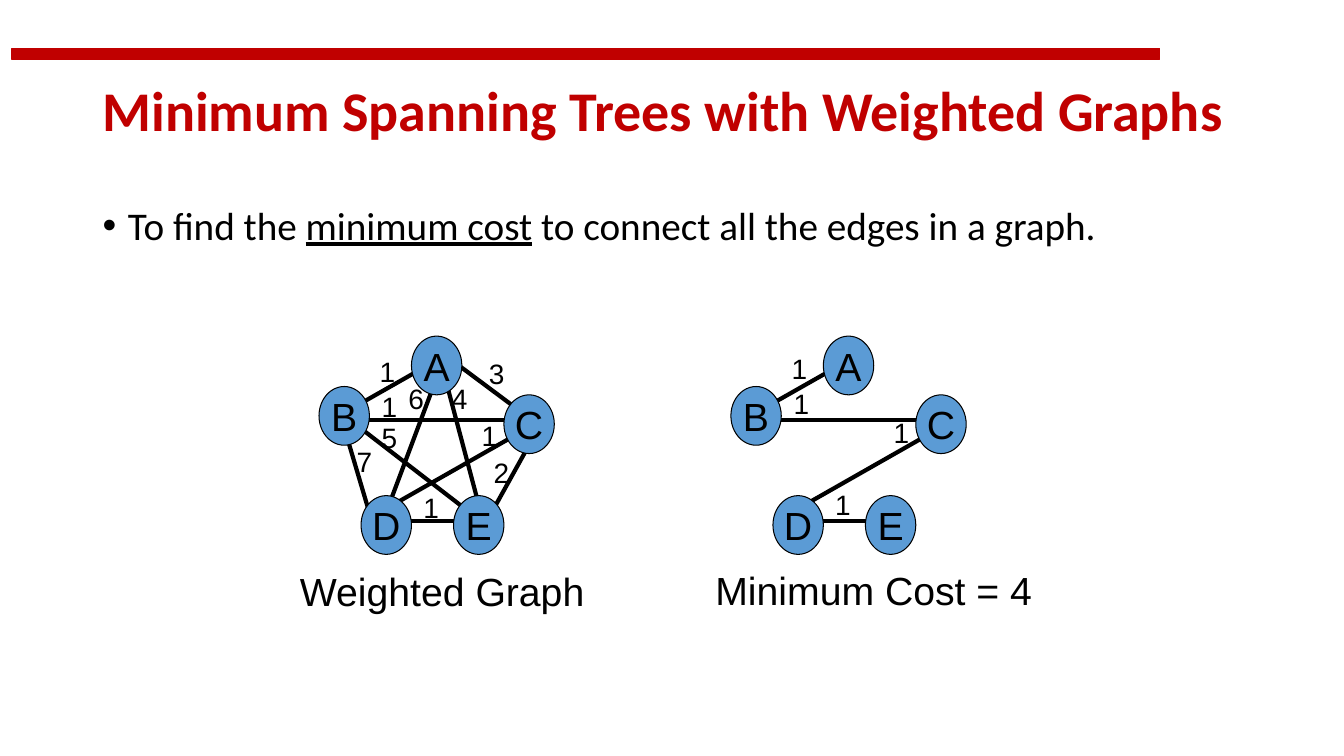
"""Build a slide that compares a weighted graph with its minimum spanning tree."""
from dataclasses import dataclass

import pptx
import pptx.dml.color
import pptx.enum.shapes
import pptx.enum.text
import pptx.oxml.ns
import pptx.shapes.base
import pptx.slide
import pptx.text.text
import pptx.util
from lxml import etree
from pptx.util import Cm

RED = pptx.dml.color.RGBColor(0xC0, 0x00, 0x00)
BLUE = pptx.dml.color.RGBColor(0x5B, 0x9B, 0xD5)
BLACK = pptx.dml.color.RGBColor(0x00, 0x00, 0x00)

GRAPH_TOP = 8.47
NODE_WIDTH, NODE_HEIGHT = 1.27, 1.48
LABEL_WIDTH, LABEL_HEIGHT = 0.82, 1.1
CAPTION_HEIGHT = 1.45


@dataclass(frozen=True)
class Node:
    """A vertex, placed in cm from the corner of its graph."""
    name: str
    left: float
    top: float


@dataclass(frozen=True)
class Edge:
    """A weighted edge and its label corner, in cm from the corner of its graph."""
    weight: int
    start: tuple[float, float]
    end: tuple[float, float]
    label: tuple[float, float]
    in_tree: bool = False


@dataclass(frozen=True)
class Graph:
    """One drawing with its caption, in cm on the slide."""
    left: float
    edges: list[Edge]
    label_shift: float
    caption: str
    caption_left: float
    caption_top: float
    caption_width: float


NODES = [
    Node("A", 2.33, 0),
    Node("C", 4.66, 1.48),
    Node("D", 1.06, 4.02),
    Node("E", 3.39, 4.02),
    Node("B", 0, 1.27),
]
EDGES = [
    Edge(1, (1.06, 1.69), (2.54, 0.85), (1.28, 0.34), True),
    Edge(3, (3.39, 0.64), (5.08, 1.9), (4.03, 0.38)),
    Edge(2, (5.29, 2.75), (4.23, 4.66), (4.15, 2.89)),
    Edge(1, (3.6, 4.66), (1.9, 4.66), (2.38, 3.77), True),
    Edge(7, (1.27, 4.45), (0.64, 2.33), (0.7, 2.6)),
    Edge(6, (2.96, 1.06), (1.69, 4.45), (2, 1.03)),
    Edge(4, (3.18, 1.06), (4.02, 4.23), (3.1, 1.02)),
    Edge(1, (1.06, 2.12), (4.87, 2.12), (1.33, 1.23), True),
    Edge(1, (1.9, 4.23), (4.87, 2.54), (3.85, 1.95), True),
    Edge(5, (1.06, 2.33), (3.81, 4.45), (1.33, 2)),
]
GRAPHS = [
    Graph(8.04, EDGES, 0, "Weighted Graph", 7.31, 14.18, 7.9),
    Graph(18.42, [edge for edge in EDGES if edge.in_tree], -0.08,
          "Minimum Cost = 4", 17.78, 14.15, 8.69),
]


def format_font(paragraph: pptx.text.text._Paragraph, name: str, size: int,
                color: pptx.dml.color.RGBColor = BLACK) -> None:
    """Set the font of a whole paragraph."""
    paragraph.font.name = name
    paragraph.font.size = pptx.util.Pt(size)
    paragraph.font.color.rgb = color


def place(shape: pptx.shapes.base.BaseShape, left: float, top: float,
          width: float, height: float) -> None:
    """Move and size a shape, in cm."""
    shape.left, shape.top = Cm(left), Cm(top)
    shape.width, shape.height = Cm(width), Cm(height)


def add_bar(slide: pptx.slide.Slide) -> None:
    """Draw the red bar above the title."""
    bar = slide.shapes.add_shape(pptx.enum.shapes.MSO_SHAPE.RECTANGLE,
                                 Cm(0.3), Cm(1.22), Cm(28.93), Cm(0.28))
    bar.shadow.inherit = False
    bar.fill.solid()
    bar.fill.fore_color.rgb = RED
    bar.line.color.rgb = RED
    bar.line.width = pptx.util.Pt(1)


def fill_title(slide: pptx.slide.Slide) -> None:
    """Write the title."""
    title = slide.shapes.title
    place(title, 2.33, 1.02, 29.21, 3.68)
    title.text_frame.text = "Minimum Spanning Trees with Weighted Graphs"
    title.text_frame.auto_size = pptx.enum.text.MSO_AUTO_SIZE.NONE
    title.text_frame.vertical_anchor = pptx.enum.text.MSO_ANCHOR.MIDDLE
    paragraph = title.text_frame.paragraphs[0]
    paragraph.alignment = pptx.enum.text.PP_ALIGN.LEFT
    paragraph.line_spacing = 0.9
    format_font(paragraph, "Calibri", 40, RED)
    paragraph.font.bold = True


def fill_body(slide: pptx.slide.Slide) -> None:
    """Write the bulleted statement."""
    body = slide.placeholders[1]
    place(body, 2.33, 5.07, 29.21, 12.09)
    body.text_frame.auto_size = pptx.enum.text.MSO_AUTO_SIZE.NONE
    paragraph = body.text_frame.paragraphs[0]
    paragraph.add_run().text = "To find the "
    emphasis = paragraph.add_run()
    emphasis.text = "minimum cost"
    emphasis.font.underline = True
    paragraph.add_run().text = " to connect all the edges in a graph."
    paragraph.line_spacing = 0.9
    paragraph.space_before = pptx.util.Pt(10)
    format_font(paragraph, "Calibri", 28)
    properties = paragraph._p.get_or_add_pPr()
    properties.set("marL", str(Cm(0.64)))
    properties.set("indent", str(-Cm(0.64)))


def add_text(slide: pptx.slide.Slide, text: str, left: float, top: float,
             width: float, height: float, size: int) -> None:
    """Add a text box, in cm."""
    box = slide.shapes.add_textbox(Cm(left), Cm(top), Cm(width), Cm(height))
    box.text_frame.word_wrap = True
    box.text_frame.text = text
    format_font(box.text_frame.paragraphs[0], "Arial", size)


def add_edge(slide: pptx.slide.Slide, edge: Edge, graph_left: float) -> None:
    """Draw the line of an edge."""
    (start_x, start_y), (end_x, end_y) = edge.start, edge.end
    line = slide.shapes.add_connector(
        pptx.enum.shapes.MSO_CONNECTOR.STRAIGHT,
        Cm(graph_left + start_x), Cm(GRAPH_TOP + start_y),
        Cm(graph_left + end_x), Cm(GRAPH_TOP + end_y))
    line.line.color.rgb = BLACK
    line.line.width = pptx.util.Pt(3)
    etree.SubElement(line._element.spPr, pptx.oxml.ns.qn("a:effectLst"))


def add_node(slide: pptx.slide.Slide, node: Node, graph_left: float) -> None:
    """Draw a vertex with its name."""
    oval = slide.shapes.add_shape(
        pptx.enum.shapes.MSO_SHAPE.OVAL, Cm(graph_left + node.left),
        Cm(GRAPH_TOP + node.top), Cm(NODE_WIDTH), Cm(NODE_HEIGHT))
    oval.shadow.inherit = False
    oval.fill.solid()
    oval.fill.fore_color.rgb = BLUE
    oval.line.color.rgb = BLACK
    oval.line.width = pptx.util.Pt(0.75)
    oval.text_frame.word_wrap = False
    oval.text_frame.vertical_anchor = pptx.enum.text.MSO_ANCHOR.MIDDLE
    oval.text_frame.text = node.name
    paragraph = oval.text_frame.paragraphs[0]
    paragraph.alignment = pptx.enum.text.PP_ALIGN.CENTER
    format_font(paragraph, "Arial", 28)


def add_graph(slide: pptx.slide.Slide, graph: Graph) -> None:
    """Draw a graph: edges, then nodes, caption and weights."""
    for edge in graph.edges:
        add_edge(slide, edge, graph.left)
    for node in NODES:
        add_node(slide, node, graph.left)
    add_text(slide, graph.caption, graph.caption_left, graph.caption_top,
             graph.caption_width, CAPTION_HEIGHT, 28)
    for edge in graph.edges:
        label_x, label_y = edge.label
        add_text(slide, str(edge.weight), graph.left + label_x,
                 GRAPH_TOP + label_y + graph.label_shift,
                 LABEL_WIDTH, LABEL_HEIGHT, 20)


def main() -> None:
    """Build and save the presentation."""
    presentation = pptx.Presentation()
    presentation.slide_width, presentation.slide_height = Cm(33.87), Cm(19.05)
    slide = presentation.slides.add_slide(presentation.slide_layouts[1])
    add_bar(slide)
    fill_title(slide)
    fill_body(slide)
    for graph in GRAPHS:
        add_graph(slide, graph)
    presentation.save("out.pptx")


if __name__ == "__main__":
    main()
